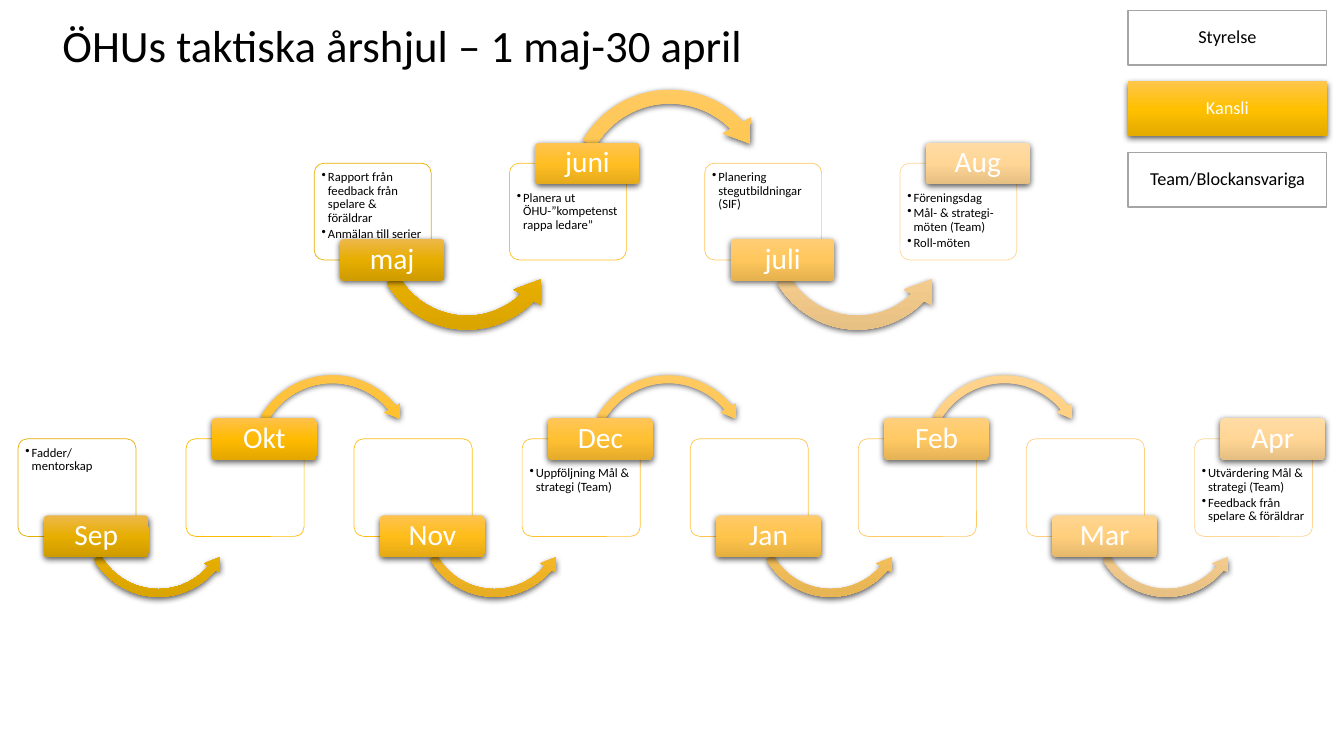
"""Build the yearly planning wheel slide: two rows of months and a legend."""
from lxml import etree
from pptx import Presentation
from pptx.dml.color import RGBColor
from pptx.enum.shapes import MSO_SHAPE
from pptx.enum.text import MSO_ANCHOR, MSO_AUTO_SIZE, PP_ALIGN
from pptx.oxml import parse_xml
from pptx.oxml.ns import nsdecls, qn
from pptx.util import Pt

RECTANGLE, ROUNDED = MSO_SHAPE.RECTANGLE, MSO_SHAPE.ROUNDED_RECTANGLE
ARC_ABOVE, ARC_BELOW = MSO_SHAPE.CIRCULAR_ARROW, MSO_SHAPE.LEFT_CIRCULAR_ARROW
TOP, MIDDLE = MSO_ANCHOR.TOP, MSO_ANCHOR.MIDDLE
LEFT, CENTER = PP_ALIGN.LEFT, PP_ALIGN.CENTER
NO_AUTOFIT = MSO_AUTO_SIZE.NONE

TITLE = "ÖHUs taktiska årshjul – 1 maj-30 april"
LEGEND = [("Styrelse", False), ("Kansli", True), ("Team/Blockansvariga", False)]

# month, tag tone, tone of the arrow to the next month, activities
SPRING = [
    ("maj", "E7AE00", "F4B700",
     ["Rapport från feedback från spelare & föräldrar", "Anmälan till serier"]),
    ("juni", "FFBE22", "FFC445", ["Planera ut ÖHU-”kompetenstrappa ledare”"]),
    ("juli", "FFC75C", "FFD695", ["Planering stegutbildningar (SIF)"]),
    ("Aug", "FFD695", None,
     ["Föreningsdag", "Mål- & strategi-möten (Team)", "Roll-möten"]),
]
SEASON = [
    ("Sep", "E7AE00", "F4B700", ["Fadder/mentorskap"]),
    ("Okt", "FFBB01", "FFBE0F", []),
    ("Nov", "FFBD1A", "FFC02A", []),
    ("Dec", "FFC032", "FFC445", ["Uppföljning Mål & strategi (Team)"]),
    ("Jan", "FFC44B", "FFC860", []),
    ("Feb", "FFC964", "FFCE7A", []),
    ("Mar", "FFCF7D", "FFD695", []),
    ("Apr", "FFD695", None,
     ["Utvärdering Mål & strategi (Team)", "Feedback från spelare & föräldrar"]),
]

THEME = {
    "font": "Calibri", "black": "000000", "white": "FFFFFF", "grey": "A5A5A5",
    "gold": "FFC000",
    "title": 32, "month": 21, "legend": 13, "activity": 9,
    "tones": {
        "E7AE00": ("EDB84B", "CE9B00"), "F4B700": ("F9C04B", "D8A300"),
        "FFBB01": ("FFC14B", "E4A700"), "FFBD1A": ("FFC34F", "E5A915"),
        "FFBE0F": ("FFC44D", "E5AA0B"), "FFBE22": ("FFC452", "E5AA1C"),
        "FFC000": ("FFC64B", "E3AB00"), "FFC02A": ("FFC655", "E5AC23"),
        "FFC032": ("FFC659", "E5AB2B"), "FFC445": ("FFCA64", "E5AF3B"),
        "FFC44B": ("FFCA69", "E5AF40"), "FFC75C": ("FFCD75", "E5B24F"),
        "FFC860": ("FFCE78", "E5B353"), "FFC964": ("FFCF7B", "E5B356"),
        "FFCE7A": ("FFD48E", "E5B86A"), "FFCF7D": ("FFD590", "E5B86C"),
        "FFD695": ("FFDBA5", "E5BE82"),
    },
}

# arcs: shape, left and top offset from the card, size, adjustments
ROWS = [
    {"months": SPRING, "left": 224.5, "top": 116.6, "pitch": 139.45,
     "card": (83.5, 69.1), "tag": (74.3, 29.8), "low": 54,
     "arcs": [(ARC_BELOW, 36.7, -19.4, 144.7, (0.068, 9.122, 26.878, 90.245, 0.079)),
              (ARC_ABOVE, 36.7, -59, 155.5, (0.063, 8.394, 189.851, 125.755, 0.074))]},
    {"months": SEASON, "left": 12.8, "top": 313.4, "pitch": 120.05,
     "card": (84.4, 69.8), "tag": (75, 29.8), "low": 54.7,
     "arcs": [(ARC_BELOW, 43.9, 3.6, 113, (0.049, 6.26, 24.015, 90.245, 0.057)),
              (ARC_ABOVE, 42.5, -49, 123.8, (0.045, 5.653, 192.592, 125.755, 0.052))]},
]
TAG_SHIFT, TAG_HIGH = 18.5, -14.8
CARD_INSET, BULLET_INDENT = 3.3, 4.5


def write(frame, lines, size, color, align=CENTER, anchor=MIDDLE, insets=(3, 2, 3, 2), bullet=False):
    names = ("margin_left", "margin_top", "margin_right", "margin_bottom")
    settings = dict(zip(names, map(Pt, insets)))
    settings.update(word_wrap=True, auto_size=NO_AUTOFIT, vertical_anchor=anchor)
    for name, value in settings.items():
        setattr(frame, name, value)
    for index, line in enumerate(lines):
        para = frame.add_paragraph() if index else frame.paragraphs[0]
        if bullet:
            properties = para._p.get_or_add_pPr()
            properties.set("marL", str(Pt(BULLET_INDENT)))
            properties.set("indent", str(-Pt(BULLET_INDENT)))
            etree.SubElement(properties, qn("a:buChar")).set("char", "•")
            para.space_after = Pt(1.35)
        para.alignment, para.line_spacing = align, 0.9
        span = para.add_run()
        span.text = line
        for name, value in {"name": THEME["font"], "size": Pt(size), "bold": False}.items():
            setattr(span.font, name, value)
        span.font.color.rgb = RGBColor.from_string(color)


def add_box(page, kind, place, adjustments=()):
    box = page.shapes.add_shape(kind, *map(Pt, place))
    box.shadow.inherit = False
    for index, value in enumerate(adjustments):
        box.adjustments[index] = value
    return box


def outline(box, color, width):
    box.fill.solid()
    box.fill.fore_color.rgb = RGBColor.from_string(THEME["white"])
    box.line.color.rgb = RGBColor.from_string(color)
    box.line.width = Pt(width)


def gloss(box, tone):
    light, dark = THEME["tones"][tone]
    stops = "".join(f'<a:gs pos="{position}"><a:srgbClr val="{color}"/></a:gs>'
                    for position, color in ((0, light), (50000, tone), (100000, dark)))
    box.line.fill.background()
    properties = box._element.spPr
    properties.insert(2, parse_xml(
        f'<a:gradFill {nsdecls("a")} rotWithShape="1"><a:gsLst>{stops}</a:gsLst>'
        '<a:lin ang="5400000" scaled="0"/></a:gradFill>'))
    properties.find(qn("a:effectLst")).append(parse_xml(
        f'<a:outerShdw {nsdecls("a")} blurRad="{Pt(4.5)}" dist="{Pt(1.5)}" dir="5400000" '
        'algn="ctr" rotWithShape="0"><a:srgbClr val="000000"><a:alpha val="63000"/>'
        '</a:srgbClr></a:outerShdw>'))


def add_row(page, row):
    for index, (month, tone, arrow_tone, activities) in enumerate(row["months"]):
        high = index % 2
        left, top = row["left"] + index * row["pitch"], row["top"]
        card = add_box(page, ROUNDED, (left, top, *row["card"]), (0.1,))
        outline(card, tone, 0.5)
        inset_top = CARD_INSET - TAG_HIGH if high else CARD_INSET
        write(card.text_frame, activities, THEME["activity"], THEME["black"], LEFT, TOP,
              (CARD_INSET, inset_top, CARD_INSET, CARD_INSET), bullet=True)
        if arrow_tone:
            kind, shift, drop, size, adjustments = row["arcs"][high]
            gloss(add_box(page, kind, (left + shift, top + drop, size, size), adjustments),
                  arrow_tone)
        tag_top = top + (TAG_HIGH if high else row["low"])
        tag = add_box(page, ROUNDED, (left + TAG_SHIFT, tag_top, *row["tag"]), (0.1,))
        gloss(tag, tone)
        write(tag.text_frame, [month], THEME["month"], THEME["white"])


def main():
    deck = Presentation()
    deck.slide_width, deck.slide_height = Pt(960), Pt(540)
    page = deck.slides.add_slide(deck.slide_layouts[5])
    title = page.shapes.title
    place = {"left": 37.4, "top": 7.2, "width": 830, "height": 54}
    for name, value in place.items():
        setattr(title, name, Pt(value))
    write(title.text_frame, [TITLE], THEME["title"], THEME["black"], LEFT,
          insets=(7.2, 3.6, 7.2, 3.6))
    for row in ROWS:
        add_row(page, row)
    for index, (label, active) in enumerate(LEGEND):
        box = add_box(page, RECTANGLE, (805.7, 7.4 + index * 50.8, 142, 39))
        if active:
            gloss(box, THEME["gold"])
        else:
            outline(box, THEME["grey"], 1)
        write(box.text_frame, [label], THEME["legend"],
              THEME["white" if active else "black"], insets=(7.2, 1.65, 7.2, 1.65))
    deck.save("out.pptx")


if __name__ == "__main__":
    main()
